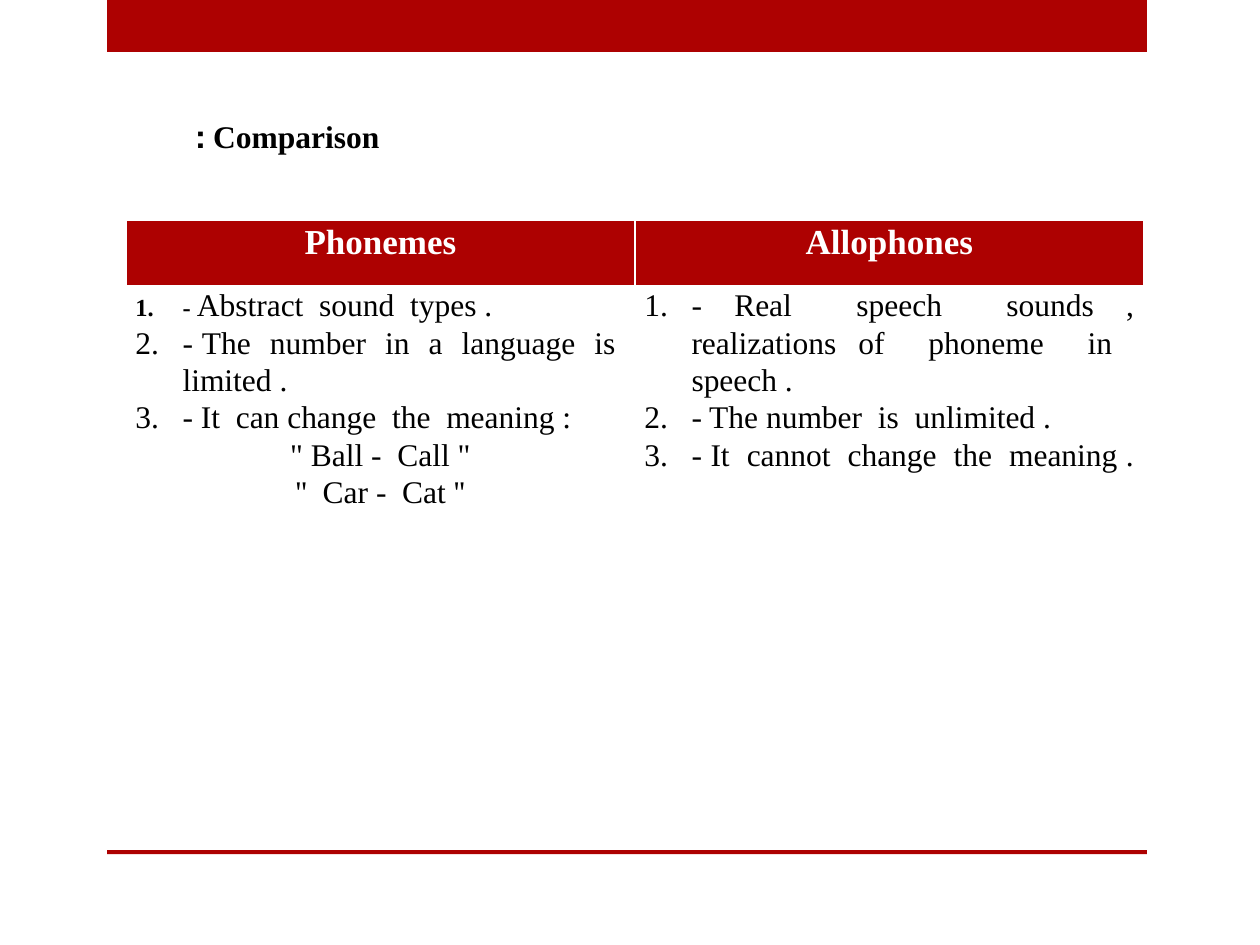
import lxml.etree
import pptx
import pptx.dml.color
import pptx.enum.shapes
import pptx.enum.text
import pptx.oxml.ns
import pptx.util

Cm = pptx.util.Cm
Pt = pptx.util.Pt
Align = pptx.enum.text.PP_ALIGN
RED = pptx.dml.color.RGBColor(0xAD, 0x01, 0x01)
WHITE = pptx.dml.color.RGBColor(0xFF, 0xFF, 0xFF)
BLACK = pptx.dml.color.RGBColor(0, 0, 0)
FACE = "Times New Roman"

HEADS = ["Phonemes", "Allophones"]
POINTS = [
    ["- Abstract  sound  types .",
     "- The  number  in  a  language  is  limited .",
     "- It  can change  the  meaning :"],
    ["- Real  speech  sounds , realizations of  phoneme  in  speech .",
     "- The number  is  unlimited .",
     "- It  cannot  change  the  meaning . "],
]
PAIRS = [["\" Ball -  Call \"", "''  Car -  Cat ''"], []]


def add_sub(parent, tag, **attrs):
    """Append a DrawingML child element with the given attributes."""
    return lxml.etree.SubElement(parent, pptx.oxml.ns.qn(tag), attrs)


def set_font(font, size, color, bold):
    """Give a font its face, size, colour and weight."""
    font.name, font.size, font.bold = FACE, Pt(size), bold
    font.color.rgb = color


def add_bar(slide, left, top, width, height):
    """Draw one plain red bar in the given box."""
    bar = slide.shapes.add_shape(
        pptx.enum.shapes.MSO_SHAPE.RECTANGLE, left, top, width, height)
    bar.shadow.inherit = False
    bar.fill.solid()
    bar.fill.fore_color.rgb = RED
    bar.line.fill.background()


def add_frame(slide, left, top, width, height):
    """Draw the thick top bar and the thin foot line of the page box."""
    add_bar(slide, left, top, width, Cm(1.05))
    foot = Cm(0.08)
    add_bar(slide, left, top + height - foot, width, foot)


def set_title(slide, left, top, width, height):
    """Place the right-to-left title in the given box."""
    title = slide.shapes.title
    title.left, title.top, title.width, title.height = left, top, width, height
    frame = title.text_frame
    frame.text = "Comparison :"
    frame.word_wrap = True
    frame.auto_size = pptx.enum.text.MSO_AUTO_SIZE.NONE
    frame.vertical_anchor = pptx.enum.text.MSO_ANCHOR.TOP
    frame.margin_left, frame.margin_right = Cm(0.25), Cm(1.37)
    para = frame.paragraphs[0]
    para.alignment = Align.CENTER
    para._p.get_or_add_pPr().set("rtl", "1")
    set_font(para.font, 18, BLACK, True)


def style_cell(cell, fill):
    """Set a cell's margins, white borders and fill."""
    cell.margin_left = cell.margin_right = Cm(0.19)
    cell.margin_top = cell.margin_bottom = 0
    props = cell._tc.get_or_add_tcPr()
    for side in "LRTB":
        line = add_sub(props, "a:ln" + side, w=str(Pt(1)))
        add_sub(add_sub(line, "a:solidFill"), "a:srgbClr", val=str(WHITE))
    if fill is None:
        cell.fill.background()
    else:
        cell.fill.solid()
        cell.fill.fore_color.rgb = fill


def add_para(frame, text, align, size, color, bold, listed=False):
    """Add a paragraph to a cell, numbered if listed."""
    para = frame.paragraphs[0]
    if para.runs:
        para = frame.add_paragraph()
    para.alignment = align
    para.line_spacing = 1.07
    if listed:
        props = para._p.get_or_add_pPr()
        props.set("marL", str(Cm(0.95)))
        props.set("indent", str(-Cm(0.95)))
        add_sub(props, "a:buFont", typeface="+mj-lt")
        add_sub(props, "a:buAutoNum", type="arabicPeriod")
    para.add_run().text = text
    set_font(para.font, size, color, bold)
    return para


def add_grid(slide, left, top, width, height):
    """Fill the box with the table that sets both terms side by side."""
    table = slide.shapes.add_table(2, 2, left, top, width, height).table
    table.rows[0].height = Cm(1.32)
    table.rows[1].height = height - Cm(1.32)
    for col, (head, points, pairs) in enumerate(zip(HEADS, POINTS, PAIRS)):
        top_cell, body = table.cell(0, col), table.cell(1, col)
        style_cell(top_cell, RED)
        style_cell(body, None)
        add_para(top_cell.text_frame, head, Align.CENTER, 20, WHITE, True)
        for text in points:
            add_para(body.text_frame, text, Align.JUSTIFY, 18, BLACK, False, True)
        for text in pairs:
            add_para(body.text_frame, text, Align.CENTER, 18, BLACK, False)
    first = table.cell(1, 0).text_frame.paragraphs[0]
    dash = first.runs[0]
    rest = first.add_run()
    dash.text, rest.text = dash.text[:2], dash.text[2:]
    set_font(dash.font, 14, BLACK, True)
    set_font(rest.font, 18, BLACK, False)


def main():
    """Build the slide and save it."""
    deck = pptx.Presentation()
    deck.slide_width, deck.slide_height = Cm(25.4), Cm(19.05)
    slide = deck.slides.add_slide(deck.slide_layouts[5])
    add_frame(slide, Cm(2.16), 0, Cm(20.96), Cm(17.22))
    set_title(slide, Cm(2.34), Cm(2.24), Cm(8.05), Cm(1.8))
    add_grid(slide, Cm(2.54), Cm(4.45), Cm(20.52), Cm(9.52))
    deck.save("out.pptx")


if __name__ == "__main__":
    main()
